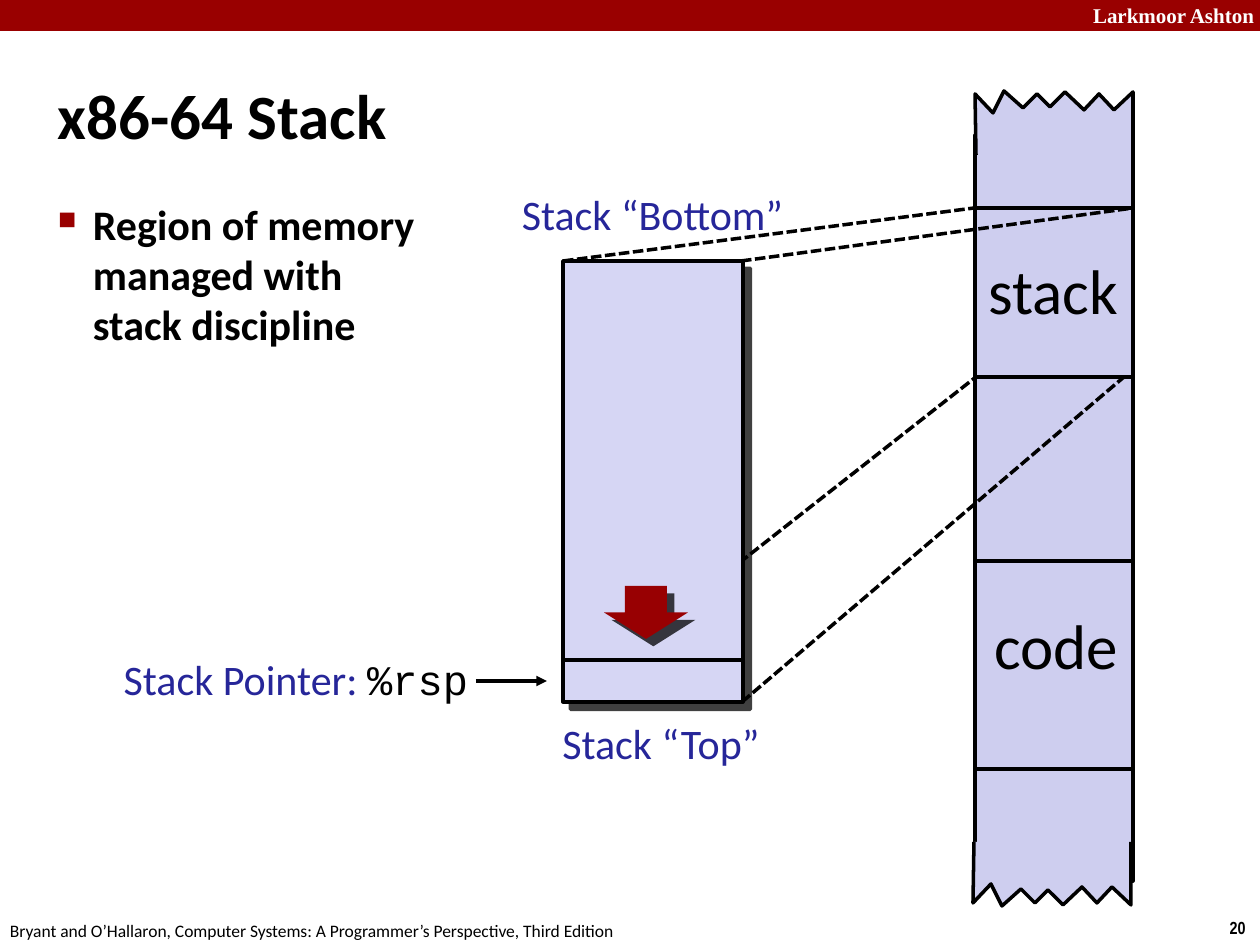
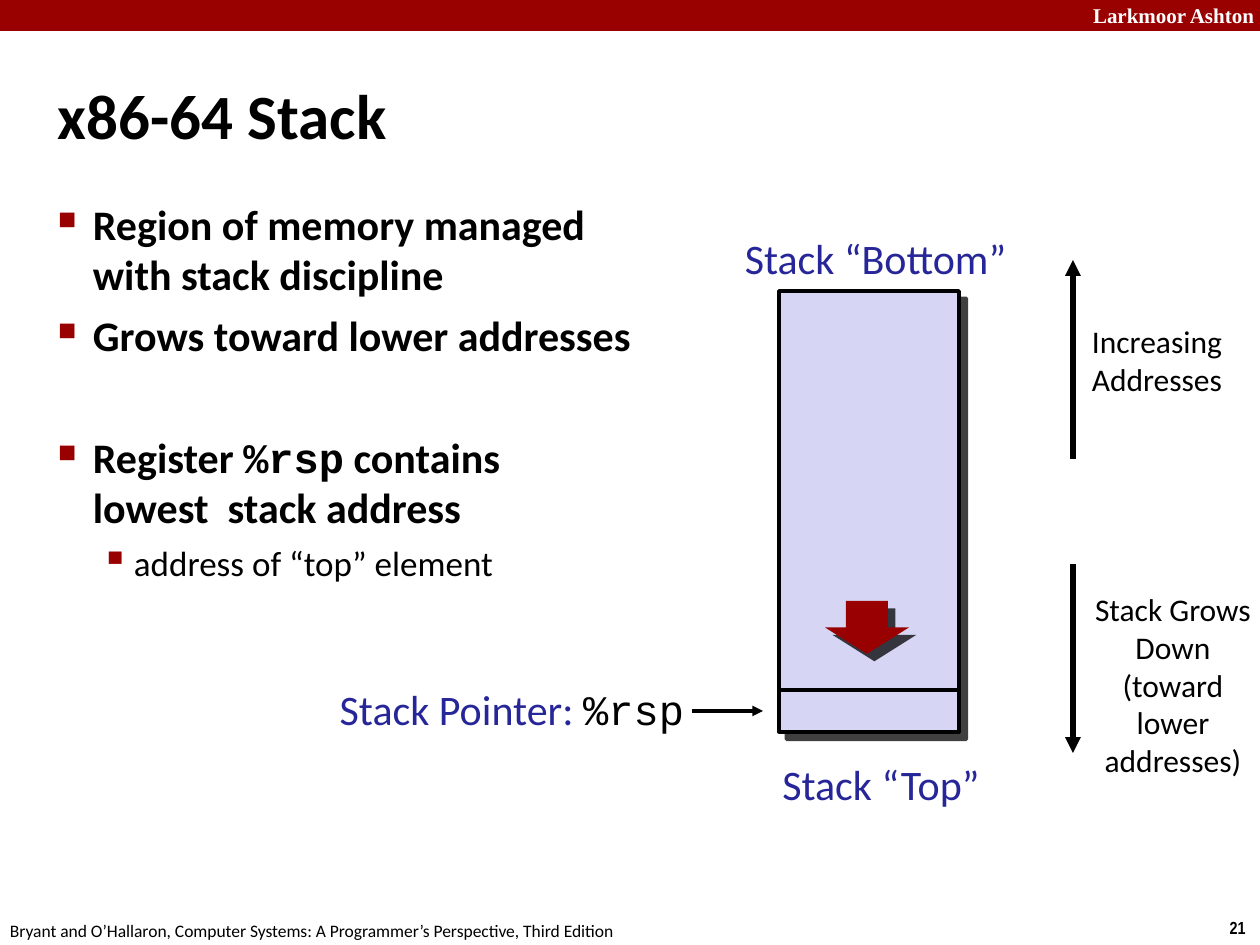
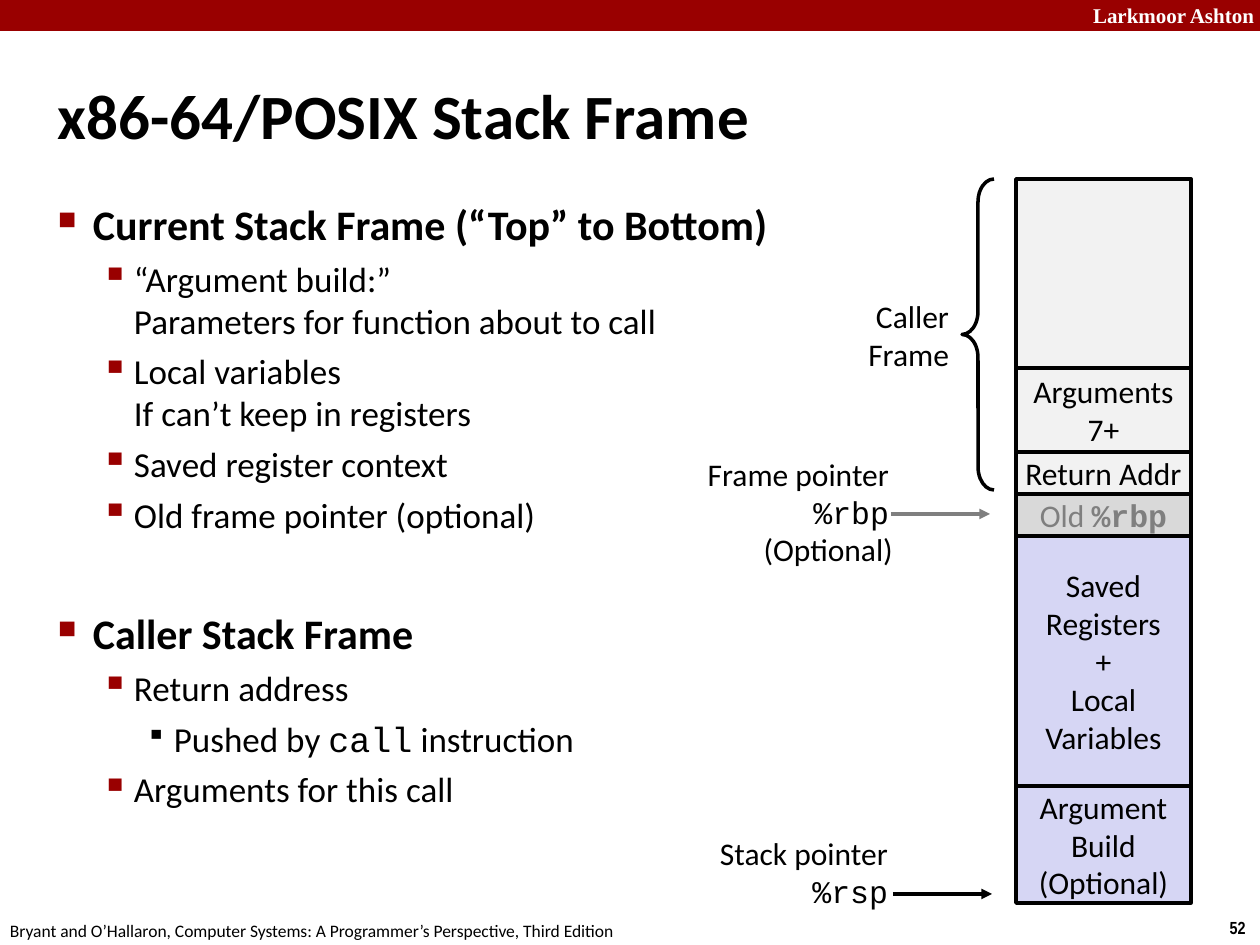
from lxml.etree import SubElement
from pptx import Presentation
from pptx.dml.color import RGBColor as RGB
from pptx.enum.dml import MSO_LINE
from pptx.enum.shapes import MSO_CONNECTOR, MSO_SHAPE
from pptx.enum.text import MSO_ANCHOR as ANCHOR, PP_ALIGN as ALIGN
from pptx.oxml.ns import qn
from pptx.util import Emu, Pt

PX = 914400 / 126  # EMU in one px


class Theme:
    black, white = RGB(0, 0, 0), RGB(255, 255, 255)
    red, arrow_red = RGB(0x99, 0, 0), RGB(0x98, 0, 2)
    blue, grey = RGB(0x26, 0x26, 0x99), RGB(0x7F, 0x7F, 0x7F)
    lilac, memory = RGB(0xD6, 0xD6, 0xF4), RGB(0xCE, 0xCE, 0xEF)
    caller, optional = RGB(0xF2, 0xF2, 0xF2), RGB(0xD9, 0xD9, 0xD9)
    font, mono, serif, narrow = "Calibri", "Courier New", "Times New Roman", "Arial Narrow"
    title, body, note, band, footer = 36, 24, 18, 12, 10
    stroke = 2
    # size, bold, margin px, hanging px, space before, bullet, bullet colour, bullet percent
    levels = [
        (24, True, 35, 35, 6, "■", "990000", 60),
        (20, False, 76, 33, 5, "▪", "990000", 110),
        (20, False, 116, 28, 5, "▪", "000000", 80),
    ]
    section_gap = 41


def block(slide, box, text="", size=Theme.note, color=Theme.black, fill=None, outline=None,
          align=ALIGN.CENTER, anchor=ANCHOR.TOP, font=Theme.font, bold=False, inset=5):
    """Text box, or rectangle when filled; text between backticks is monospaced."""
    place = [Emu(round(n * PX)) for n in box]
    if fill is None:
        shape = slide.shapes.add_textbox(*place)
    else:
        shape = slide.shapes.add_shape(MSO_SHAPE.RECTANGLE, *place)
        shape.shadow.inherit = False
        shape.fill.solid()
        shape.fill.fore_color.rgb = fill
        if outline is None:
            shape.line.fill.background()
        else:
            shape.line.color.rgb, shape.line.width = outline, Pt(Theme.stroke)
    frame = shape.text_frame
    frame.word_wrap, frame.vertical_anchor = True, anchor
    frame.margin_left = frame.margin_right = Emu(round(inset * PX))
    frame.margin_top = frame.margin_bottom = Emu(round(inset * PX))
    frame.text = text.replace("`", "")
    for paragraph, line in zip(frame.paragraphs, text.split("\n")):
        paragraph.alignment = align
        if "`" in line:
            paragraph.clear()
        for i, piece in enumerate(line.split("`") if "`" in line else []):
            for j, part in enumerate(piece.split("\v")):
                if j:
                    paragraph.add_line_break()
                if part:
                    run = paragraph.add_run()
                    run.text = part
                    run.font.name = Theme.mono if i % 2 else font
        for run in paragraph.runs:
            run.font.name = run.font.name or font
            run.font.size, run.font.bold, run.font.color.rgb = Pt(size), bold, color
    return shape


def connect(slide, start, end, color=Theme.black, width=Theme.stroke, dashed=False, arrow=False):
    line = slide.shapes.add_connector(
        MSO_CONNECTOR.STRAIGHT, *[Emu(round(n * PX)) for n in (*start, *end)])
    line.line.color.rgb, line.line.width = color, Pt(width)
    if dashed:
        line.line.dash_style = MSO_LINE.SQUARE_DOT
    if arrow:
        SubElement(line.line._get_or_add_ln(), qn("a:tailEnd"), type="triangle")
    SubElement(line._element.spPr, qn("a:effectLst"))


prs = Presentation()
prs.slide_width, prs.slide_height = Emu(round(1260 * PX)), Emu(round(945 * PX))

# Page number, title, body width, bullets as (level, text)
pages = [
    (20, "x86-64 Stack", 615, [
        (0, "Region of memory\vmanaged with\vstack discipline")]),
    (21, "x86-64 Stack", 615, [
        (0, "Region of memory managed with stack discipline"),
        (0, "Grows toward lower addresses"),
        (0, "Register `%rsp` contains\vlowest  stack address"),
        (1, "address of “top” element")]),
    (52, "x86-64/POSIX Stack Frame", 741, [
        (0, "Current Stack Frame (“Top” to Bottom)"),
        (1, "“Argument build:”\vParameters for function about to call"),
        (1, "Local variables\vIf can’t keep in registers"),
        (1, "Saved register context"),
        (1, "Old frame pointer (optional)"),
        (0, "Caller Stack Frame"),
        (1, "Return address"),
        (2, "Pushed by `call` instruction"),
        (1, "Arguments for this call")]),
]
section_starts = ("Register", "Caller Stack")

# Band, footer, title and bullets of every slide
slides = []
for number, heading, body_width, bullets in pages:
    slide = prs.slides.add_slide(prs.slide_layouts[5])
    slides.append(slide)
    block(slide, (0, 0, 1260, 31), fill=Theme.red)
    block(slide, (1089, 0, 171, 31), "Larkmoor Ashton", Theme.band, Theme.white,
          align=ALIGN.LEFT, anchor=ANCHOR.MIDDLE, font=Theme.serif, bold=True, inset=4)
    block(slide, (5, 915, 632, 30),
          "Bryant and O’Hallaron, Computer Systems: A Programmer’s Perspective, Third Edition",
          Theme.footer, align=ALIGN.LEFT)
    block(slide, (1215, 912, 45, 33), str(number), Theme.footer, font=Theme.narrow, bold=True)

    title = slide.shapes.title
    title.left, title.top, title.width, title.height = [
        Emu(round(n * PX)) for n in (53, 35, 1155, 158)]
    title.text_frame.text = heading
    title.text_frame.vertical_anchor = ANCHOR.MIDDLE
    title.text_frame.margin_left = Emu(round(5 * PX))
    title.text_frame.paragraphs[0].alignment = ALIGN.LEFT
    title_font = title.text_frame.paragraphs[0].runs[0].font
    title_font.name, title_font.size, title_font.bold = Theme.font, Pt(Theme.title), True
    title_font.color.rgb = Theme.black

    body = block(slide, (53, 193, body_width, 700), "\n".join(text for _, text in bullets),
                 Theme.body, align=ALIGN.LEFT)
    for paragraph, (level, text) in zip(body.text_frame.paragraphs, bullets):
        size, bold, margin, hanging, space, mark, mark_color, percent = Theme.levels[level]
        paragraph.level = level
        paragraph.space_before = Pt(Theme.section_gap if text.startswith(section_starts) else space)
        for run in paragraph.runs:
            run.font.size, run.font.bold = Pt(size), bold
        props = paragraph._p.get_or_add_pPr()
        props.set("marL", str(round(margin * PX)))
        props.set("indent", str(round(-hanging * PX)))
        SubElement(SubElement(props, qn("a:buClr")), qn("a:srgbClr"), val=mark_color)
        SubElement(props, qn("a:buSzPct"), val=str(percent * 1000))
        SubElement(props, qn("a:buChar"), char=mark)

memory_slide, growth_slide, frame_slide = slides

# Zoom lines that pass behind the stack
connect(memory_slide, (563, 261), (974, 208), dashed=True)
connect(memory_slide, (562, 702), (976, 377), dashed=True)

# Stack diagram: slide, left, top, then places of "Bottom", "Top" and the growth arrow
for slide, left, top, bottom_label, top_label, growth in [
    (memory_slide, 563, 261, (512, 184), (554, 713), (604, 586)),
    (growth_slide, 779, 291, (735, 228), (774, 753), (825, 601)),
]:
    stack = block(slide, (left, top, 180, 441), fill=Theme.lilac, outline=Theme.black)
    connect(slide, (left, top + 399), (left + 180, top + 399))
    connect(slide, (left - 87, top + 420), (left - 16, top + 420), arrow=True)
    pointer = block(slide, (left - 453, top + 388, 363, 63), "Stack Pointer: `%rsp`",
                    Theme.body, Theme.blue, align=ALIGN.RIGHT)
    pointer.text_frame.paragraphs[0].runs[1].font.color.rgb = Theme.black
    block(slide, (*bottom_label, 281, 62), "Stack “Bottom”", Theme.body, Theme.blue)
    block(slide, (*top_label, 214, 62), "Stack “Top”", Theme.body, Theme.blue)
    push = slide.shapes.add_shape(
        MSO_SHAPE.DOWN_ARROW, *[Emu(round(n * PX)) for n in (*growth, 84, 53)])
    push.fill.solid()
    push.fill.fore_color.rgb = Theme.arrow_red
    push.line.fill.background()
    for shaded in (stack, push):
        shaded.shadow.inherit = False
        effects = shaded._element.spPr.find(qn("a:effectLst"))
        shadow = SubElement(effects, qn("a:outerShdw"), blurRad="0", dist=str(Pt(6)),
                            dir="2700000", algn="ctr", rotWithShape="0")
        shadow_color = SubElement(shadow, qn("a:srgbClr"), val="000000")
        SubElement(shadow_color, qn("a:alpha"), val="75000")

# Memory column with torn ends; the lower end mirrors the upper one
block(memory_slide, (975, 135, 158, 746), fill=Theme.memory, outline=Theme.black)
torn_edge = [(1133, 155), (1133, 92), (1114, 110), (1099, 94), (1084, 110), (1065, 92),
             (1050, 107), (1037, 94), (1023, 108), (1004, 91), (993, 113), (975, 94), (976, 155)]
mirrored_edge = [(x - 2, 997 - y) for x, y in torn_edge]
for edge in (torn_edge, mirrored_edge):
    outline = memory_slide.shapes.build_freeform(*edge[0], scale=PX)
    outline.add_line_segments(edge[1:], close=False)
    torn_end = outline.convert_to_shape()
    torn_end.shadow.inherit = False
    torn_end.fill.solid()
    torn_end.fill.fore_color.rgb = Theme.memory
    torn_end.line.color.rgb, torn_end.line.width = Theme.black, Pt(Theme.stroke)
for y in (208, 377, 561, 769):
    connect(memory_slide, (975, y), (1131, y))
block(memory_slide, (981, 602, 151, 89), "code", Theme.title)
block(memory_slide, (975, 247, 156, 89), "stack", Theme.title)
connect(memory_slide, (741, 261), (1133, 208), dashed=True)
connect(memory_slide, (742, 702), (1124, 377), dashed=True)

# Address directions beside the stack
connect(growth_slide, (1073, 564), (1073, 753), width=3, arrow=True)
connect(growth_slide, (1073, 459), (1073, 260), width=3, arrow=True)
block(growth_slide, (1086, 585, 174, 263), "Stack Grows\nDown\n(toward lower addresses)",
      fill=Theme.white)
block(growth_slide, (1086, 317, 142, 87), "Increasing\nAddresses", fill=Theme.white)

# Stack frame: cells stacked from the caller down
cell_top = 179
for height, text, fill, color in [
    (189, "", Theme.caller, Theme.black),
    (84, "Arguments\n7+", Theme.caller, Theme.black),
    (42, "Return Addr", Theme.caller, Theme.black),
    (42, "Old `%rbp`", Theme.optional, Theme.grey),
    (250, "Saved\nRegisters\n+\nLocal\nVariables", Theme.lilac, Theme.black),
    (117, "Argument\nBuild\n(Optional)", Theme.lilac, Theme.black),
]:
    cell = block(frame_slide, (1016, cell_top, 175, height), text, color=color, fill=fill,
                 outline=Theme.black, anchor=ANCHOR.MIDDLE, inset=0)
    for run in cell.text_frame.paragraphs[0].runs:
        run.font.bold = run.font.name == Theme.mono
    cell_top += height

# Caller brace and the two pointers
brace = frame_slide.shapes.add_shape(
    MSO_SHAPE.LEFT_BRACE, *[Emu(round(n * PX)) for n in (962, 179, 32, 311)])
brace.adjustments[0], brace.adjustments[1] = 0.72, 0.5
brace.shadow.inherit = False
brace.fill.background()
brace.line.color.rgb, brace.line.width = Theme.black, Pt(Theme.stroke)
for box, text in [
    ((859, 292, 95, 87), "Caller\nFrame"),
    ((679, 450, 215, 84), "Frame pointer\v`%rbp`"),
    ((683, 525, 215, 84), "(Optional)"),
    ((689, 829, 204, 84), "Stack pointer\n`%rsp`"),
]:
    block(frame_slide, box, text, align=ALIGN.RIGHT)
connect(frame_slide, (891, 514), (990, 514), color=Theme.grey, arrow=True)
connect(frame_slide, (893, 894), (992, 894), arrow=True)

prs.save("out.pptx")
